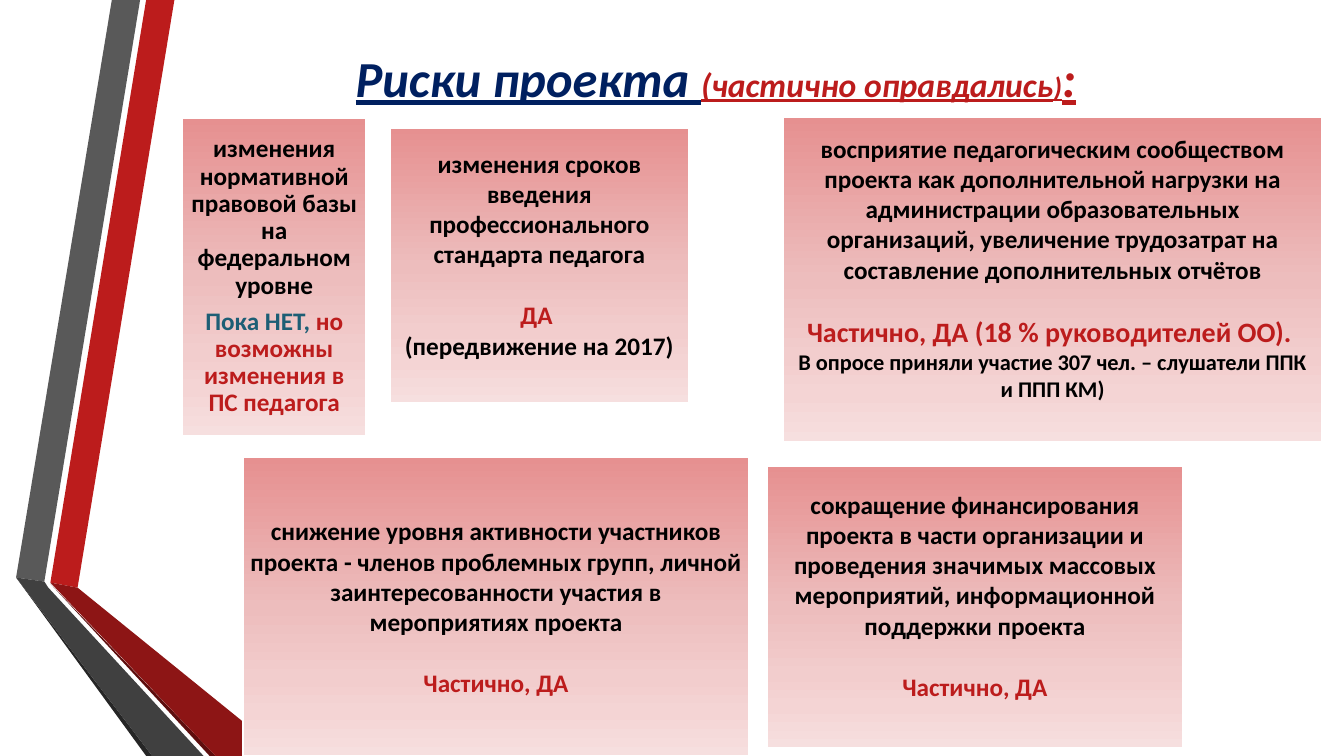
import pptx
import pptx.util
import pptx.dml.color
import pptx.enum.shapes
import pptx.enum.text
import pptx.oxml
import pptx.oxml.ns

Inches = pptx.util.Inches
Pt = pptx.util.Pt

theme = {
    "font": "Calibri",
    "navy": "002060",
    "red": "BC1C1C",
    "teal": "1D5E75",
    "black": "000000",
    "white": "FFFFFF",
    "gray": "595959",
    "gray_dark": "404040",
    "gray_edge": "262626",
    "red_dark": "8D1515",
    "red_edge": "5E0E0E",
    "card_stops": [(0, "E69090"), (50, "EDBDBD"), (74, "F2CDCD"), (85, "F4D4D4"), (100, "F6DFDF")],
    "title": 36,
    "subtitle": 24,
    "bracket": 20,
    "body": 18,
    "strong": 20,
    "small": 16,
}


def rgb(name):
    return pptx.dml.color.RGBColor.from_string(theme[name])


def write(paragraph, runs, **formats):
    paragraph.alignment = pptx.enum.text.PP_ALIGN.CENTER
    for words, size, color in runs:
        run = paragraph.add_run()
        run.text = words
        values = {"name": theme["font"], "size": Pt(theme[size]), "bold": True, **formats}
        for attribute, value in values.items():
            setattr(run.font, attribute, value)
        run.font.color.rgb = rgb(color)


deck = pptx.Presentation()
deck.slide_width = Inches(13.33)
deck.slide_height = Inches(7.5)
slide = deck.slides.add_slide(deck.slide_layouts[6])

ribbons = [
    ("red", [(0.5, 5.78), (0.77, 5.83), (1.73, 0), (1.45, 0)]),
    ("gray", [(1.39, 0), (1.11, 0), (0.16, 5.73), (0.44, 5.77)]),
    ("gray_edge", [(0.16, 5.73), (1.45, 7.5), (1.51, 7.5)]),
    ("red_edge", [(0.5, 5.79), (2.08, 7.5), (2.14, 7.5)]),
    ("red_dark", [(0.5, 5.78), (2.14, 7.5), (2.83, 7.5), (0.77, 5.83)]),
    ("gray_dark", [(2.02, 7.5), (0.48, 5.83), (0.44, 5.77), (0.16, 5.73), (1.51, 7.5)]),
]
for color, corners in ribbons:
    points = [(Inches(x), Inches(y)) for x, y in corners]
    outline = slide.shapes.build_freeform(*points[0])
    outline.add_line_segments(points[1:], close=True)
    ribbon = outline.convert_to_shape()
    ribbon.shadow.inherit = False
    ribbon.fill.solid()
    ribbon.fill.fore_color.rgb = rgb(color)
    ribbon.line.fill.background()

heading = slide.shapes.add_textbox(Inches(1.62), Inches(0.26), Inches(10.96), Inches(1.01)).text_frame
heading.word_wrap = True
heading.vertical_anchor = pptx.enum.text.MSO_ANCHOR.MIDDLE
heading_runs = [
    ("Риски проекта ", "title", "navy"),
    ("(частично оправдались", "subtitle", "red"),
    (")", "bracket", "red"),
    (":", "title", "red"),
]
write(heading.paragraphs[0], heading_runs, italic=True, underline=True)

partly = [("Частично, ДА", "body", "red")]
tight = {"line_spacing": 0.9, "space_after": Pt(6.3)}
verdict_gap = {"space_before": Pt(22)}
lifted = 0.3
risks = [
    ((1.81, 1.17, 1.82, 3.15), 0.07, [
        ([("изменения нормативной правовой базы на федеральном уровне", "body", "black")], tight),
        ([("Пока НЕТ, ", "body", "teal"),
          ("но возможны изменения в ПС педагога", "body", "red")], tight),
    ]),
    ((3.87, 1.27, 2.96, 2.73), lifted, [
        ([("изменения сроков введения профессионального стандарта педагога", "body", "black")], {}),
        ([("ДА ", "body", "red")], verdict_gap),
        ([("(передвижение на 2017)", "body", "black")], {}),
    ]),
    ((7.77, 1.16, 5.34, 3.22), lifted, [
        ([("восприятие педагогическим сообществом проекта как дополнительной нагрузки на "
           "администрации образовательных организаций, увеличение трудозатрат на "
           "составление дополнительных отчётов", "body", "black")], {}),
        ([("Частично, ДА (18 % руководителей ОО). ", "strong", "red")], verdict_gap),
        ([("В опросе приняли участие 307 чел. – слушатели ППК и ППП КМ)", "small", "black")], {}),
    ]),
    ((2.41, 4.54, 5.02, 2.96), 0.07, [
        ([("снижение уровня активности участников проекта - членов проблемных групп, "
           "личной заинтересованности участия в мероприятиях проекта", "body", "black")], {}),
        (partly, verdict_gap),
    ]),
    ((7.61, 4.62, 4.12, 2.8), lifted, [
        ([("сокращение финансирования проекта в части организации и проведения значимых "
           "массовых мероприятий, информационной поддержки проекта", "body", "black")], {}),
        (partly, verdict_gap),
    ]),
]
for box, bottom, statements in risks:
    card = slide.shapes.add_shape(pptx.enum.shapes.MSO_SHAPE.RECTANGLE, *map(Inches, box))
    card.shadow.inherit = False
    card.fill.gradient()
    card.fill.gradient_angle = 270
    stops = card._element.spPr.find(".//" + pptx.oxml.ns.qn("a:gsLst"))
    for stop in list(stops):
        stops.remove(stop)
    for position, shade in theme["card_stops"]:
        stops.append(pptx.oxml.parse_xml(
            f'<a:gs {pptx.oxml.ns.nsdecls("a")} pos="{position * 1000}"><a:srgbClr val="{shade}"/></a:gs>'))
    card.line.color.rgb = rgb("white")
    card.line.width = Pt(1.25)

    frame = card.text_frame
    frame_format = {
        "word_wrap": True,
        "vertical_anchor": pptx.enum.text.MSO_ANCHOR.MIDDLE,
        "margin_left": Inches(0.07),
        "margin_right": Inches(0.07),
        "margin_top": Inches(0.07),
        "margin_bottom": Inches(bottom),
    }
    for attribute, value in frame_format.items():
        setattr(frame, attribute, value)
    for index, (runs, spacing) in enumerate(statements):
        statement = frame.add_paragraph() if index else frame.paragraphs[0]
        for attribute, value in spacing.items():
            setattr(statement, attribute, value)
        write(statement, runs)

deck.save("out.pptx")
